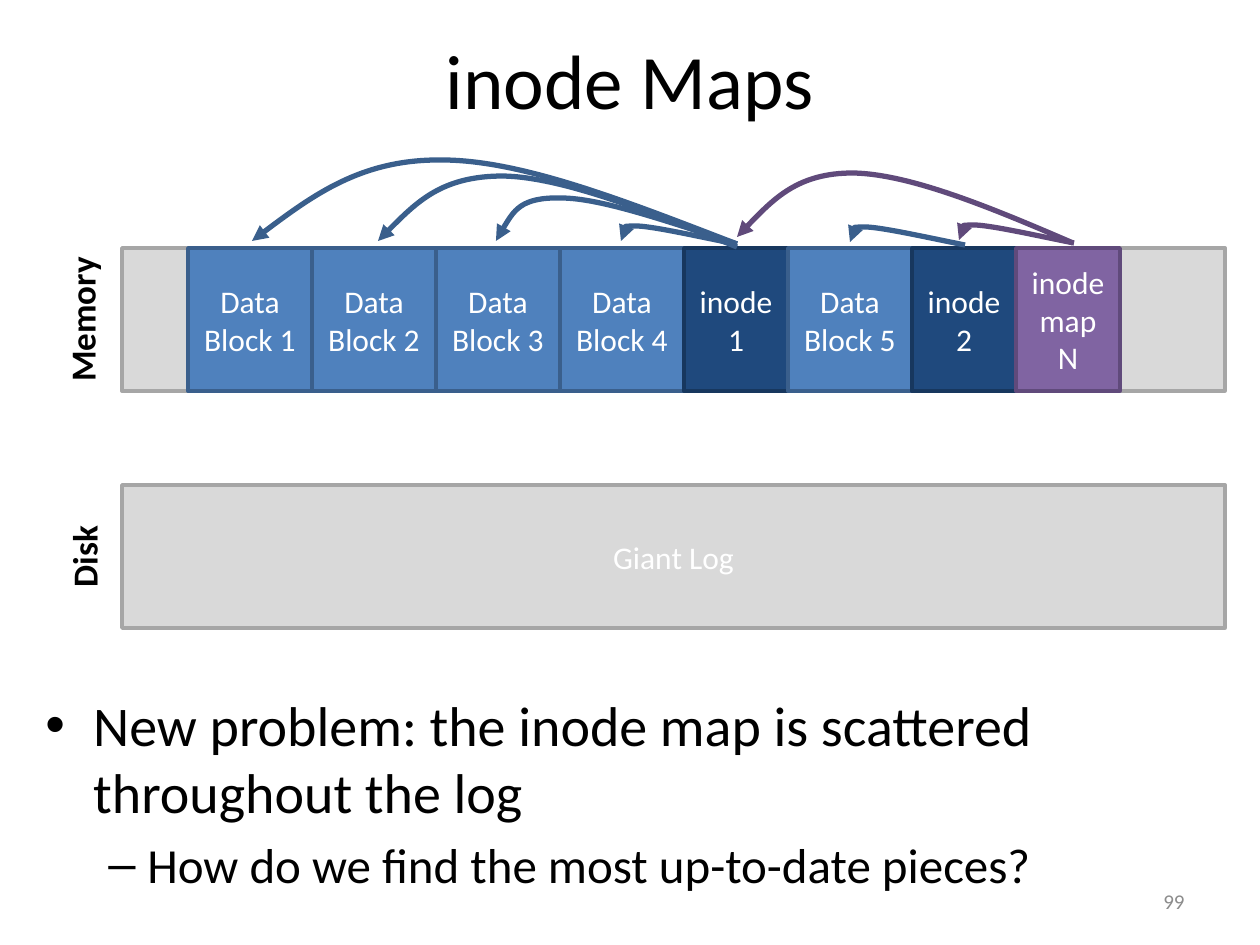
from lxml.etree import SubElement
from pptx import Presentation
from pptx.dml.color import RGBColor
from pptx.enum.shapes import MSO_SHAPE
from pptx.enum.text import MSO_ANCHOR as Anchor, PP_ALIGN as Align
from pptx.oxml.ns import qn
from pptx.util import Emu, Inches, Pt

PX = 914400 / 126
COLORS = {
    "black": "000000", "white": "FFFFFF", "number": "8C8C8C",
    "log": "D9D9D9", "log_edge": "A6A6A6",
    "data": "4F81BD", "data_edge": "3A5F8C",
    "inode": "1F497D", "inode_edge": "17375E",
    "map": "8064A2", "map_edge": "604A7B",
}

prs = Presentation()
prs.slide_width, prs.slide_height = Inches(10), Inches(7.5)
slide = prs.slides.add_slide(prs.slide_layouts[6])


def write(shape, lines, size, color, align=Align.CENTER, anchor=Anchor.MIDDLE, bold=False):
    frame = shape.text_frame
    frame.word_wrap = True
    frame.vertical_anchor = anchor
    for i, line in enumerate(lines):
        paragraph = frame.paragraphs[0] if i == 0 else frame.add_paragraph()
        paragraph.alignment = align
        run = paragraph.add_run()
        run.text = line
        run.font.name = "Calibri"
        run.font.size = Pt(size)
        run.font.bold = bold
        run.font.color.rgb = RGBColor.from_string(COLORS[color])


def add_box(box, kind=None):
    """Add a rectangle of the given kind, or a plain text box without one."""
    place = [Emu(round(length * PX)) for length in box]
    if kind is None:
        return slide.shapes.add_textbox(*place)
    shape = slide.shapes.add_shape(MSO_SHAPE.RECTANGLE, *place)
    shape.shadow.inherit = False
    shape.fill.solid()
    shape.fill.fore_color.rgb = RGBColor.from_string(COLORS[kind])
    shape.line.color.rgb = RGBColor.from_string(COLORS[kind + "_edge"])
    shape.line.width = Pt(2)
    return shape


# Title and slide number
write(add_box((63, 0, 1134, 158)), ["inode Maps"], 44, "black")
write(add_box((903, 876, 294, 50)), ["99"], 12, "number", align=Align.RIGHT)

# Memory and disk bars with their upright labels
MEMORY_TOP, DISK_TOP, BAR_HEIGHT = 248, 485, 143
add_box((122, MEMORY_TOP, 1103, BAR_HEIGHT), "log")
disk = add_box((122, DISK_TOP, 1103, BAR_HEIGHT), "log")
write(disk, ["Giant Log"], 18, "white")
for name, left, top in [("Memory", -8, 292), ("Disk", -6, 529)]:
    label = add_box((left, top, 180, 55))
    label.rotation = 270
    write(label, [name], 20, "black", anchor=Anchor.TOP, bold=True)

# Blocks in memory, side by side
WIDTHS = {"data": 124, "inode": 104, "map": 104}
blocks = [
    ("data", ["Data Block 1"]), ("data", ["Data Block 2"]),
    ("data", ["Data Block 3"]), ("data", ["Data Block 4"]),
    ("inode", ["inode", "1"]), ("data", ["Data Block 5"]),
    ("inode", ["inode", "2"]), ("map", ["inode", "map", "N"]),
]
block_left = 188
for kind, lines in blocks:
    block = add_box((block_left, MEMORY_TOP, WIDTHS[kind], BAR_HEIGHT), kind)
    write(block, lines, 18, "white")
    block_left += WIDTHS[kind]

# Pointers: a start point, then two Bezier segments of three points each
hook = [(736, 244), (696, 236), (656, 227), (638, 226), (619, 226), (620, 233), (621, 241)]
pointers = [
    ("data_edge", [(737, 244), (630, 203), (523, 160), (442, 160),
                   (362, 159), (306, 200), (252, 241)]),
    ("data_edge", [(737, 247), (650, 212), (562, 177), (503, 176),
                   (442, 176), (410, 208), (378, 241)]),
    ("data_edge", [(737, 244), (669, 222), (601, 198), (561, 198),
                   (520, 197), (508, 219), (496, 241)]),
]
for color, dx, dy in [("data_edge", 0, 0), ("data_edge", 229, 1), ("map_edge", 338, -1)]:
    pointers.append((color, [(x + dx, y + dy) for x, y in hook]))
pointers.append(("map_edge", [(1073, 243), (992, 208), (910, 174), (853, 173),
                              (798, 173), (767, 205), (737, 237)]))

for color, points in pointers:
    builder = slide.shapes.build_freeform(*points[0], scale=PX)
    builder.add_line_segments(points[1:], close=False)
    pointer = builder.convert_to_shape()
    pointer.shadow.inherit = False
    pointer.fill.background()
    pointer.line.color.rgb = RGBColor.from_string(COLORS[color])
    pointer.line.width = Pt(3)
    properties = pointer._element.spPr
    SubElement(properties.find(qn("a:ln")), qn("a:tailEnd"), type="triangle")
    outline = next(properties.iter(qn("a:path")))
    segments = outline.findall(qn("a:lnTo"))
    for start in range(0, len(segments), 3):
        curve = SubElement(outline, qn("a:cubicBezTo"))
        for segment in segments[start:start + 3]:
            curve.append(segment[0])
            outline.remove(segment)

# Bullets
body = add_box((33, 684, 1196, 248))
write(body, ["New problem: the inode map is scattered throughout the log",
             "How do we find the most up-to-date pieces?"],
      32, "black", align=Align.LEFT, anchor=Anchor.TOP)
levels = [("•", 32, 0.38, 0.38), ("–", 28, 0.81, 0.31)]
for level, (paragraph, (mark, size, margin, hang)) in enumerate(
        zip(body.text_frame.paragraphs, levels)):
    paragraph.level = level
    paragraph.space_before = Pt(size * 0.2)
    paragraph.runs[0].font.size = Pt(size)
    settings = paragraph._p.get_or_add_pPr()
    settings.set("marL", str(Inches(margin)))
    settings.set("indent", str(-Inches(hang)))
    SubElement(settings, qn("a:buFont"), typeface="Arial")
    SubElement(settings, qn("a:buChar"), char=mark)

prs.save("out.pptx")
